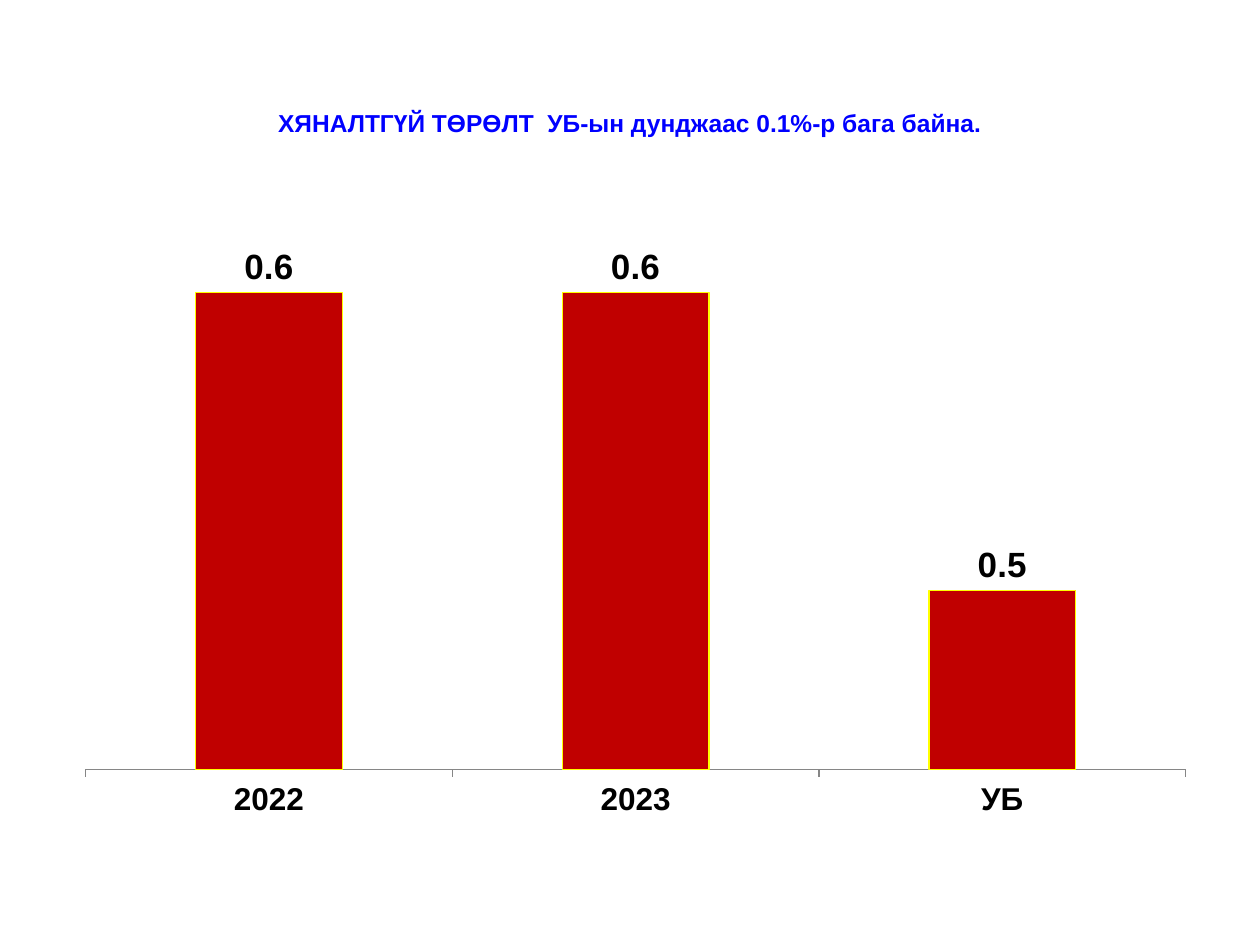
from lxml.etree import SubElement
from pptx import Presentation
from pptx.chart.data import CategoryChartData
from pptx.dml.color import RGBColor
from pptx.enum.chart import XL_CHART_TYPE, XL_LABEL_POSITION, XL_TICK_MARK
from pptx.enum.text import MSO_ANCHOR, PP_ALIGN
from pptx.oxml.ns import qn
from pptx.util import Inches, Pt

HUES = {"title": "0000FF", "bar": "C00000", "edge": "FFFF00",
        "text": "000000", "axis": "868686"}


def hue(name):
    return RGBColor.from_string(HUES[name])


def style(font, size, color, face="Arial", bold=True):
    font.name, font.size, font.bold = face, Pt(size), bold
    font.color.rgb = hue(color)


deck = Presentation()
deck.slide_width, deck.slide_height = Inches(10), Inches(7.5)
wide, high = deck.slide_width, deck.slide_height
slide = deck.slides.add_slide(deck.slide_layouts[6])
left, width = int(wide * 0.05), int(wide * 0.9)

# Title, set a little below the middle of its box
box = slide.shapes.add_textbox(left, int(high * 0.04), width, int(high * 0.15))
frame = box.text_frame
frame.word_wrap = True
frame.vertical_anchor = MSO_ANCHOR.MIDDLE
frame.margin_top = Inches(0.28)
line = frame.paragraphs[0]
line.alignment = PP_ALIGN.CENTER
run = line.add_run()
run.text = "ХЯНАЛТГҮЙ ТӨРӨЛТ  УБ-ын дунджаас 0.1%-р бага байна."
style(run.font, 14, "title")

# Chart
data = CategoryChartData()
data.categories = ["2022", "2023", "УБ"]
data.add_series("Series 1", [0.6, 0.6, 0.5])
chart = slide.shapes.add_chart(
    XL_CHART_TYPE.COLUMN_CLUSTERED, left, Inches(1.75), width,
    int(high * 0.66), data).chart
chart.has_legend = False
chart.has_title = False
style(chart.font, 18, "text", "Calibri", False)

# Axes
base = chart.category_axis
base.major_tick_mark = XL_TICK_MARK.OUTSIDE
base.format.line.color.rgb = hue("axis")
style(base.tick_labels.font, 18, "text")
scale = chart.value_axis
scale.minimum_scale, scale.maximum_scale = 0.44, 0.62
scale.has_major_gridlines = False
scale.visible = False

# Bars and their values
plot = chart.plots[0]
plot.gap_width = 150
plot.vary_by_categories = False
bars = plot.series[0]
bars.format.fill.solid()
bars.format.fill.fore_color.rgb = hue("bar")
bars.format.line.color.rgb = hue("edge")
bars.format.line.width = Pt(0.75)
labels = bars.data_labels
labels.show_value = True
labels.position = XL_LABEL_POSITION.OUTSIDE_END
style(labels.font, 20, "text")

# Inner plot area as shares of the chart
area = chart.plots[0]._element.getparent()
for old in area.findall(qn("c:layout")):
    area.remove(old)
layout = SubElement(area, qn("c:layout"))
area.insert(0, layout)
manual = SubElement(layout, qn("c:manualLayout"))
for tag, val in [("layoutTarget", "inner"), ("xMode", "edge"), ("yMode", "edge"),
                 ("x", "0.02"), ("y", "0.02"), ("w", "0.97"), ("h", "0.86")]:
    SubElement(manual, qn("c:" + tag)).set("val", val)

deck.save("out.pptx")
